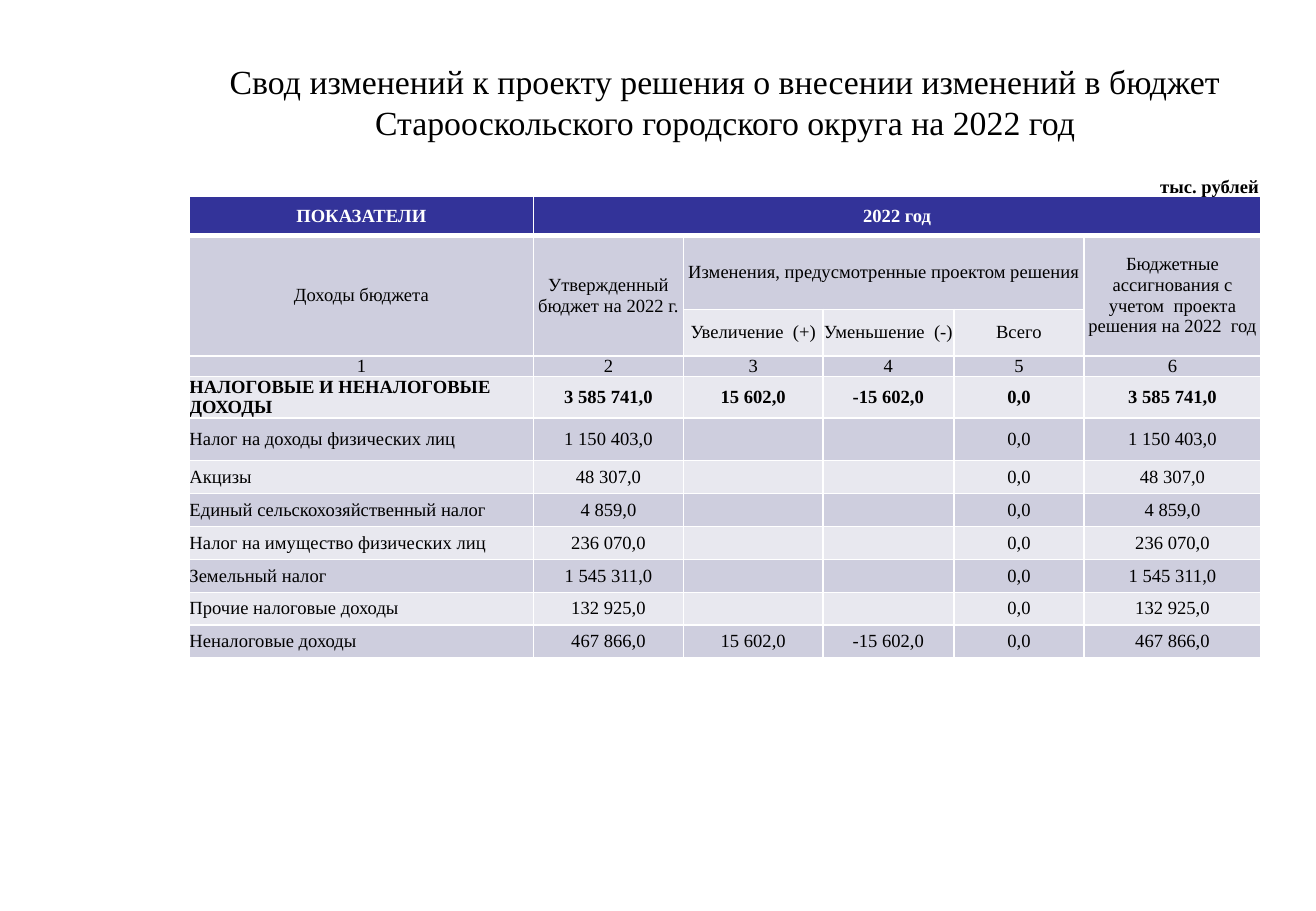
from dataclasses import dataclass

from lxml.etree import SubElement
from pptx import Presentation
from pptx.dml.color import RGBColor
from pptx.enum.text import MSO_ANCHOR, PP_ALIGN
from pptx.oxml.ns import qn
from pptx.slide import Slide
from pptx.table import Table, _Cell
from pptx.text.text import TextFrame
from pptx.util import Cm, Pt

FONT = "Times New Roman"
BLACK = RGBColor(0x00, 0x00, 0x00)
WHITE = RGBColor(0xFF, 0xFF, 0xFF)
NAVY = RGBColor(0x33, 0x33, 0x99)
DARK = RGBColor(0xCE, 0xCE, 0xDE)
LIGHT = RGBColor(0xE8, 0xE8, 0xEF)

LEFT, TOP, WIDTH = 3.96, 4.11, 22.4
COLS = [7.19, 3.14, 2.91, 2.74, 2.72, 3.7]
ROWS = [0.81, 1.55, 0.97, 0.43, 0.69, 0.89] + [0.69] * 6
SPANS = [(0, 1, 0, 5), (1, 0, 2, 0), (1, 1, 2, 1), (1, 2, 1, 4), (1, 5, 2, 5)]
TOTAL = 4

CELLS = [
    ["ПОКАЗАТЕЛИ", "2022 год", "", "", "", ""],
    ["Доходы бюджета", "Утвержденный бюджет на 2022 г.",
     "Изменения, предусмотренные проектом решения", "", "",
     "Бюджетные ассигнования с учетом  проекта решения на 2022  год"],
    ["", "", "Увеличение  (+)", "Уменьшение  (-)", "Всего", ""],
    ["1", "2", "3", "4", "5", "6"],
]


@dataclass
class Income:
    name: str
    plan: str
    up: str = ""
    down: str = ""

    def cells(self) -> list[str]:
        return [self.name, self.plan, self.up, self.down, "0,0", self.plan]


INCOMES = [
    Income("НАЛОГОВЫЕ И НЕНАЛОГОВЫЕ ДОХОДЫ", "3 585 741,0", "15 602,0", "-15 602,0"),
    Income("Налог на доходы физических лиц", "1 150 403,0"),
    Income("Акцизы", "48 307,0"),
    Income("Единый сельскохозяйственный налог", "4 859,0"),
    Income("Налог на имущество физических лиц", "236 070,0"),
    Income("Земельный налог", "1 545 311,0"),
    Income("Прочие налоговые доходы", "132 925,0"),
    Income("Неналоговые доходы", "467 866,0", "15 602,0", "-15 602,0"),
]


@dataclass
class Style:
    size: int = 11
    bold: bool = False
    color: RGBColor = BLACK
    align: PP_ALIGN = PP_ALIGN.CENTER


@dataclass
class Label:
    text: str
    left: float
    top: float
    width: float
    height: float
    wrap: bool
    anchor: MSO_ANCHOR
    style: Style


LABELS = [
    Label("Свод изменений к проекту решения о внесении изменений в бюджет "
          "Старооскольского городского округа на 2022 год",
          LEFT, 0.53, WIDTH, 3.18, True, MSO_ANCHOR.MIDDLE, Style(size=20)),
    Label("тыс. рублей", 23.95, 3.53, 2.62, 0.74, False, MSO_ANCHOR.TOP,
          Style(bold=True, align=PP_ALIGN.RIGHT)),
]


def write(frame: TextFrame, text: str, style: Style) -> None:
    frame.text = text
    para = frame.paragraphs[0]
    para.alignment = style.align
    for run in para.runs:
        font = run.font
        font.name = FONT
        font.size = Pt(style.size)
        font.bold = style.bold
        font.color.rgb = style.color
    if not text:
        SubElement(para._p, qn("a:endParaRPr"), sz=str(style.size * 100))


def border(cell: _Cell, side: str, width: float) -> None:
    line = SubElement(cell._tc.get_or_add_tcPr(), qn(f"a:ln{side}"), w=str(Pt(width)))
    fill = SubElement(line, qn("a:solidFill"))
    SubElement(fill, qn("a:srgbClr"), val=str(WHITE))


def draw_cell(cell: _Cell, text: str, row: int, col: int) -> None:
    for side in "LRTB":
        thick = (row, side) in ((0, "B"), (1, "T"))
        border(cell, side, 3 if thick else 1)
    cell.fill.solid()
    cell.fill.fore_color.rgb = NAVY if row == 0 else DARK if row % 2 else LIGHT
    cell.margin_left = cell.margin_right = 0
    cell.margin_top = cell.margin_bottom = 0
    cell.vertical_anchor = MSO_ANCHOR.MIDDLE
    write(cell.text_frame, text, Style(
        bold=row in (0, TOTAL),
        color=WHITE if row == 0 else BLACK,
        align=PP_ALIGN.LEFT if col == 0 and row >= TOTAL else PP_ALIGN.CENTER))


def draw_table(slide: Slide) -> None:
    frame = slide.shapes.add_table(len(ROWS), len(COLS), Cm(LEFT), Cm(TOP),
                                   Cm(WIDTH), Cm(sum(ROWS)))
    table: Table = frame.table
    for col, width in zip(table.columns, COLS):
        col.width = Cm(width)
    for row, height in zip(table.rows, ROWS):
        row.height = Cm(height)
    for r, texts in enumerate(CELLS + [item.cells() for item in INCOMES]):
        for c, text in enumerate(texts):
            draw_cell(table.cell(r, c), text, r, c)
    for top, left, low, right in SPANS:
        table.cell(top, left).merge(table.cell(low, right))


def draw_label(slide: Slide, label: Label) -> None:
    box = slide.shapes.add_textbox(Cm(label.left), Cm(label.top),
                                   Cm(label.width), Cm(label.height))
    frame = box.text_frame
    frame.word_wrap = label.wrap
    frame.vertical_anchor = label.anchor
    write(frame, label.text, label.style)


def main() -> None:
    deck = Presentation()
    deck.slide_width, deck.slide_height = Cm(27.51), Cm(19.05)
    slide = deck.slides.add_slide(deck.slide_layouts[6])
    draw_table(slide)
    for label in LABELS:
        draw_label(slide, label)
    deck.save("out.pptx")


if __name__ == "__main__":
    main()
